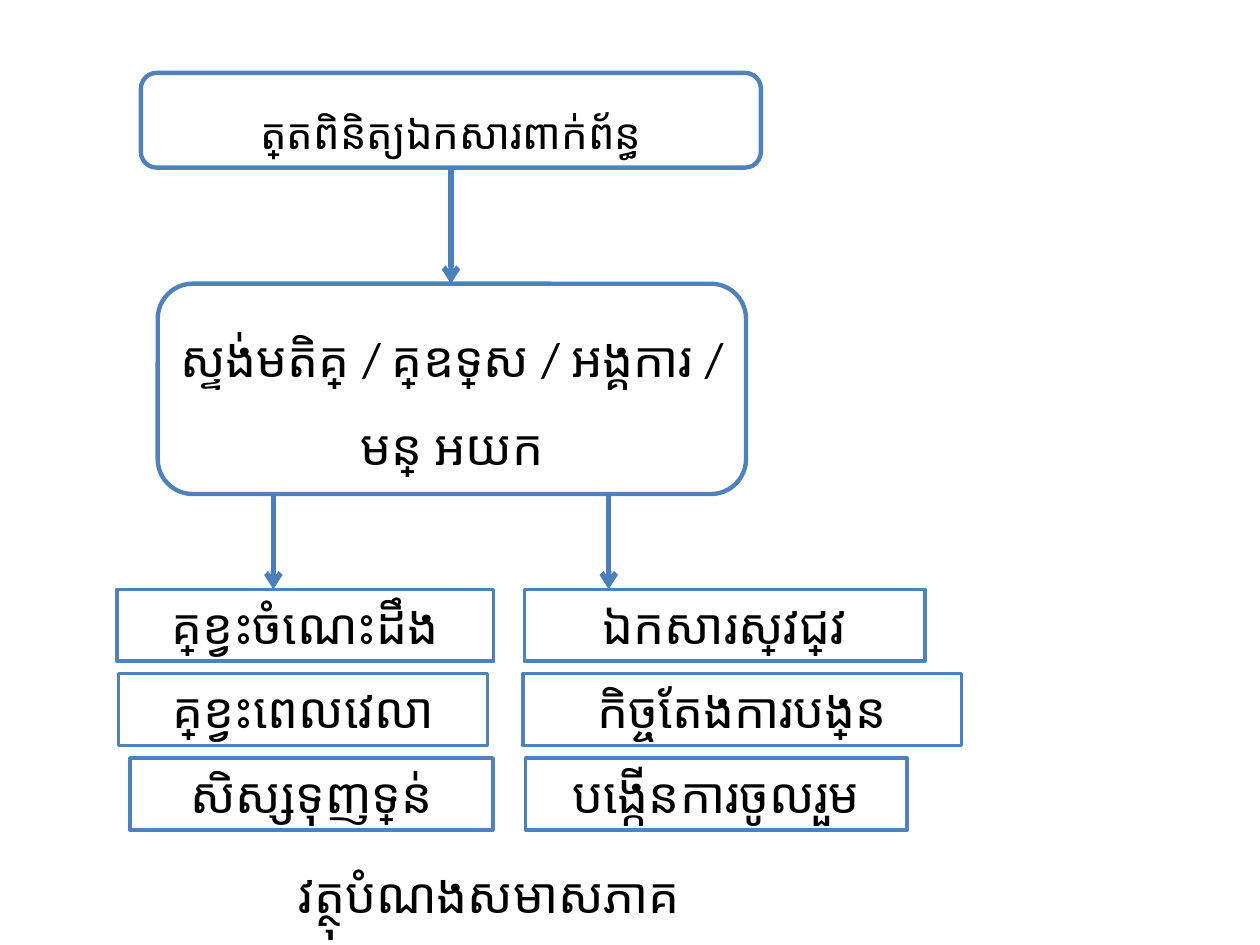
from lxml import etree
from pptx import Presentation
from pptx import util as u
from pptx.dml.color import RGBColor
from pptx.enum import shapes, text
from pptx.oxml.ns import qn

# Content: text, left, top, width, height (cm) and type size key
STEPS = [
    ("ត្រូតពិនិត្យឯកសារពាក់ព័ន្ធ", 2.84, 1.47, 12.5, 1.91, "small"),
    ("ស្ទង់មតិគ្រូ / គ្រូឧទ្ទេស / អង្គការ / មន្ត្រី អយក", 3.18, 5.72, 11.86, 4.24, "large"),
]
# Two columns of findings: text, left, width (cm)
COLUMNS = [
    [("គ្រូខ្វះចំណេះដឹង", 2.36, 7.59),
     ("គ្រូខ្វះពេលវេលា", 2.39, 7.44),
     ("សិស្សទុញទ្រាន់", 2.62, 7.32)],
    [("ឯកសារស្រាវជ្រាវ", 10.57, 8.08),
     ("កិច្ចតែងការបង្រៀន", 10.54, 8.84),
     ("បង្កើនការចូលរួម", 10.59, 7.7)],
]
CAPTION = ("វត្ថុបំណងសមាសភាគ", 4.88, 16.71, 9.96, 1.91)
BRANCH_X = (5.51, 12.27)
ROW_TOP, ROW_STEP, ROW_HEIGHT = 11.88, 1.7, 1.45

THEME = {
    "font": "Calibri", "small": 24, "large": 28,
    "ink": RGBColor(0, 0, 0), "paper": RGBColor(255, 255, 255),
    "border": RGBColor(0x4F, 0x81, 0xBD), "arrow": RGBColor(0x4B, 0x7E, 0xBC),
}


def write(sp, content, size="large", spacing=None, inset=None, wrap=False):
    """Put centred text in a shape, starting from its top edge."""
    tf = sp.text_frame
    tf.word_wrap = wrap
    tf.auto_size = text.MSO_AUTO_SIZE.NONE
    tf.vertical_anchor = text.MSO_ANCHOR.TOP
    if inset is not None:
        tf.margin_left = tf.margin_right = u.Cm(inset)
        tf.margin_top = tf.margin_bottom = u.Cm(inset)
    p = tf.paragraphs[0]
    p.alignment = text.PP_ALIGN.CENTER
    if spacing:
        p.line_spacing = spacing
    r = p.add_run()
    r.text = content
    r.font.name = THEME["font"]
    r.font.size = u.Pt(THEME[size])
    r.font.color.rgb = THEME["ink"]


def add_box(slide, kind, left, top, width, height, line):
    sp = slide.shapes.add_shape(kind, *map(u.Cm, (left, top, width, height)))
    sp.shadow.inherit = False
    sp.fill.solid()
    sp.fill.fore_color.rgb = THEME["paper"]
    sp.line.color.rgb = THEME["border"]
    sp.line.width = u.Pt(line)
    return sp


def add_arrow(slide, x, top, bottom):
    cx = slide.shapes.add_connector(
        shapes.MSO_CONNECTOR.STRAIGHT, *map(u.Cm, (x, top, x, bottom)))
    cx.line.color.rgb = THEME["arrow"]
    cx.line.width = u.Pt(3)
    etree.SubElement(cx.line._get_or_add_ln(), qn("a:tailEnd"), type="arrow")
    etree.SubElement(cx._element.spPr, qn("a:effectLst"))


def main():
    prs = Presentation()
    prs.slide_width, prs.slide_height = u.Cm(25.4), u.Cm(19.05)
    slide = prs.slides.add_slide(prs.slide_layouts[6])

    # Main steps
    for content, left, top, width, height, size in STEPS:
        sp = add_box(slide, shapes.MSO_SHAPE.FLOWCHART_ALTERNATE_PROCESS,
                     left, top, width, height, 2.5)
        write(sp, content, size=size, spacing=1.5, inset=0.1, wrap=True)

    # Arrows between the steps and down to each column
    (_, left, top, width, height, _), (_, _, next_top, _, next_height, _) = STEPS
    add_arrow(slide, left + width / 2, top + height, next_top)
    for x in BRANCH_X:
        add_arrow(slide, x, next_top + next_height, ROW_TOP)

    # Findings
    for column in COLUMNS:
        for row, (content, left, width) in enumerate(column):
            sp = add_box(slide, shapes.MSO_SHAPE.RECTANGLE, left,
                         ROW_TOP + row * ROW_STEP, width, ROW_HEIGHT, 2)
            write(sp, content)

    # Caption
    content, *place = CAPTION
    write(slide.shapes.add_textbox(*map(u.Cm, place)), content, spacing=1.5)

    prs.save("out.pptx")


if __name__ == "__main__":
    main()
